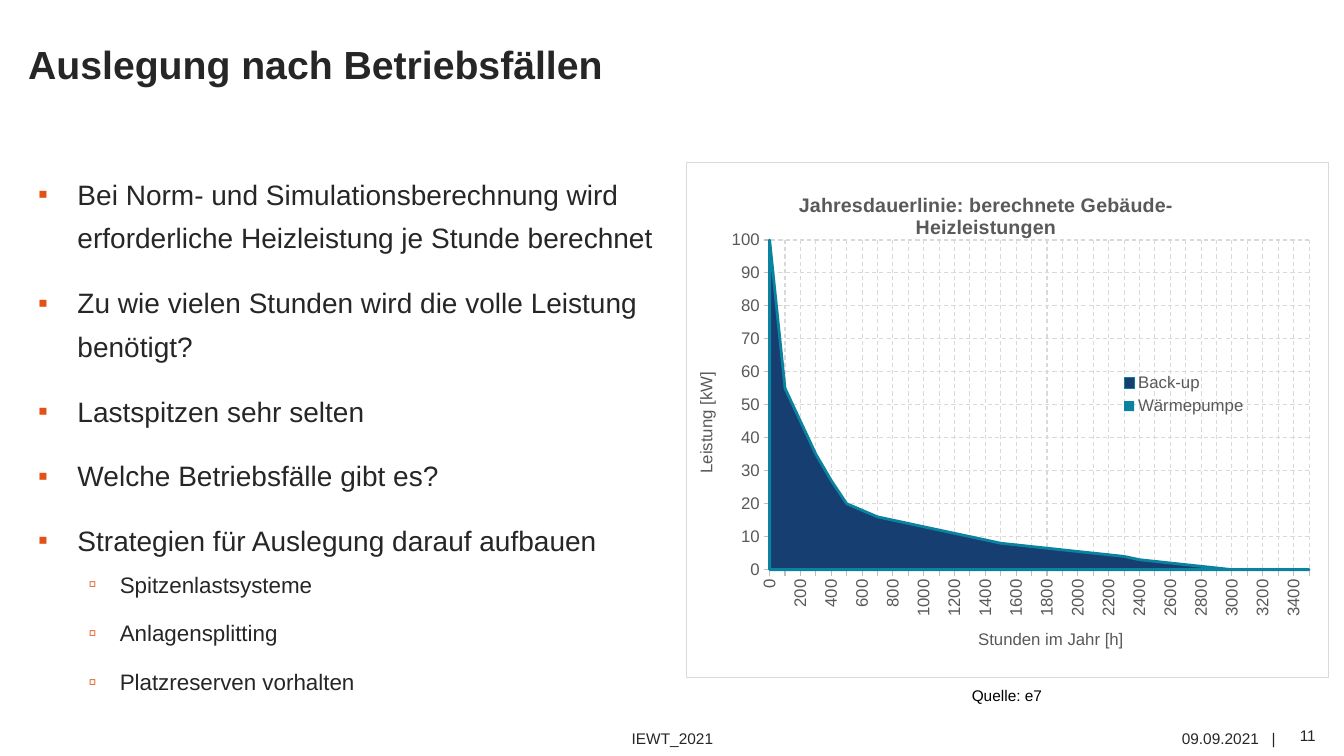
from lxml import etree
from pptx import Presentation
from pptx.chart.data import CategoryChartData
from pptx.dml.color import RGBColor
from pptx.enum.chart import XL_CHART_TYPE as ChartType, XL_LEGEND_POSITION as LegendPos, XL_TICK_MARK as Tick
from pptx.enum.dml import MSO_LINE as Dash
from pptx.enum.text import MSO_ANCHOR as Anchor, PP_ALIGN as Align
from pptx.oxml import parse_xml
from pptx.oxml.ns import nsdecls, qn
from pptx.util import Inches, Pt

FONT = "Arial"
COLORS = {"text": "262626", "black": "000000", "bullet": "E35114", "chart_text": "595959",
          "axis": "BFBFBF", "grid": "D9D9D9", "backup": "173E70", "heat_pump": "0A83A0"}
POINTS = [("Bei Norm- und Simulationsberechnung wird erforderliche Heizleistung je Stunde berechnet", 0),
          ("Zu wie vielen Stunden wird die volle Leistung benötigt?", 0),
          ("Lastspitzen sehr selten", 0),
          ("Welche Betriebsfälle gibt es?", 0),
          ("Strategien für Auslegung darauf aufbauen", 0),
          ("Spitzenlastsysteme", 1),
          ("Anlagensplitting", 1),
          ("Platzreserven vorhalten", 1)]
LEVELS = [{"size": 20, "mark": "▪", "left": 0.39, "hang": 0.39, "before": 15, "after": 0},
          {"size": 16, "mark": "▫", "left": 0.81, "hang": 0.31, "before": 4, "after": 6}]
HOURS = range(0, 3501, 100)
LOAD = [100, 55, 45, 35, 27, 20, 18, 16, 15, 14, 13, 12, 11, 10, 9, 8, 7.5, 7, 6.5, 6, 5.5, 5,
        4.5, 4, 3, 2.5, 2, 1.5, 1, 0.5, 0, 0, 0, 0, 0, 0]
HEAT_PUMP_MAX = 20


def rgb(name):
    return RGBColor.from_string(COLORS[name])


def style(font, size, color, bold=False):
    font.name, font.size, font.bold = FONT, Pt(size), bold
    font.color.rgb = rgb(color)


def add_label(slide, box, text, size=11, color="text", bold=False, align=Align.LEFT,
              anchor=Anchor.MIDDLE, inset=True, spacing=None, wrap=True):
    frame = slide.shapes.add_textbox(*map(Inches, box)).text_frame
    frame.word_wrap, frame.vertical_anchor = wrap, anchor
    if not inset:
        frame.margin_left = frame.margin_right = frame.margin_top = frame.margin_bottom = 0
    line = frame.paragraphs[0]
    line.text, line.alignment, line.line_spacing = text, align, spacing
    style(line.font, size, color, bold)


def add_points(slide, box):
    frame = slide.shapes.add_textbox(*map(Inches, box)).text_frame
    frame.word_wrap = True
    for index, (text, depth) in enumerate(POINTS):
        level = LEVELS[depth]
        point = frame.add_paragraph() if index else frame.paragraphs[0]
        point.text, point.level, point.line_spacing = text, depth, 1.3
        point.space_before = Pt(level["before"] if index else 0)
        point.space_after = Pt(level["after"])
        props = point._p.get_or_add_pPr()
        props.set("marL", str(Inches(level["left"])))
        props.set("indent", str(-Inches(level["hang"])))
        bullet_color = etree.SubElement(props, qn("a:buClr"))
        etree.SubElement(bullet_color, qn("a:srgbClr"), val=COLORS["bullet"])
        etree.SubElement(props, qn("a:buFont"), typeface=FONT)
        etree.SubElement(props, qn("a:buChar"), char=level["mark"])
        style(point.font, level["size"], "text")


def place(element, inner=False, **position):
    for old in element.findall(qn("c:layout")):
        element.remove(old)
    layout = etree.Element(qn("c:layout"))
    manual = etree.SubElement(layout, qn("c:manualLayout"))
    if inner:
        etree.SubElement(manual, qn("c:layoutTarget"), val="inner")
    for key in ("x", "y"):
        etree.SubElement(manual, qn(f"c:{key}Mode"), val="edge")
    for key, value in position.items():
        etree.SubElement(manual, qn(f"c:{key}"), val=str(value))
    overlay = element.find(qn("c:overlay"))
    if overlay is None:
        element.insert(0, layout)
    else:
        overlay.addprevious(layout)


def set_title(title, text, size, bold, x, y):
    line = title.text_frame.paragraphs[0]
    line.text = text
    style(line.font, size, "chart_text", bold)
    place(title._element, x=x, y=y)


def format_axis(axis, text, x, y):
    axis.has_title = axis.has_major_gridlines = True
    set_title(axis.axis_title, text, 12, False, x, y)
    axis.major_tick_mark, axis.minor_tick_mark = Tick.OUTSIDE, Tick.NONE
    axis.tick_labels.number_format = "#,##0"
    axis.tick_labels.number_format_is_linked = False
    style(axis.tick_labels.font, 12, "chart_text")
    for line, color in ((axis.format.line, "axis"), (axis.major_gridlines.format.line, "grid")):
        line.color.rgb, line.width = rgb(color), Pt(0.75)
    axis.major_gridlines.format.line.dash_style = Dash.DASH


def add_load_chart(slide, box):
    data = CategoryChartData()
    data.categories = [str(hour) for hour in HOURS]
    data.add_series("Back-up", LOAD)
    data.add_series("Wärmepumpe", [min(load, HEAT_PUMP_MAX) for load in LOAD])
    chart = slide.shapes.add_chart(ChartType.AREA, *map(Inches, box), data).chart
    style(chart.font, 12, "chart_text")
    chart.has_title = True
    set_title(chart.chart_title, "Jahresdauerlinie: berechnete Gebäude-Heizleistungen", 14, True, 0.17, 0.05)

    hours, power = chart.category_axis, chart.value_axis
    format_axis(hours, "Stunden im Jahr [h]", 0.45, 0.9)
    format_axis(power, "Leistung [kW]", 0.01, 0.4)
    power.minimum_scale, power.maximum_scale, power.major_unit = 0, 100, 10
    power._element.find(qn("c:crossBetween")).set("val", "midCat")
    hours._element.txPr.find(qn("a:bodyPr")).set("rot", "-5400000")
    skip = etree.Element(qn("c:tickLblSkip"), val="2")
    hours._element.find(qn("c:noMultiLvlLbl")).addprevious(skip)

    plot = chart.plots[0]
    plot.vary_by_categories = False
    for series, color in zip(plot.series, ("backup", "heat_pump")):
        series.format.fill.solid()
        series.format.fill.fore_color.rgb = rgb(color)
    backup, heat_pump = plot.series
    backup.format.line.color.rgb, backup.format.line.width = rgb("heat_pump"), Pt(2)
    heat_pump.format.line.fill.background()

    chart.has_legend = True
    chart.legend.position, chart.legend.include_in_layout = LegendPos.RIGHT, False
    style(chart.legend.font, 12, "chart_text")
    place(chart.legend._element, x=0.67, y=0.4, w=0.21, h=0.1)
    space = chart._chartSpace
    place(space.chart.plotArea, inner=True, x=0.13, y=0.15, w=0.84, h=0.64)
    space.chart.addnext(parse_xml(
        f'<c:spPr {nsdecls("c", "a")}><a:noFill/><a:ln w="{Pt(0.75)}"><a:solidFill>'
        f'<a:srgbClr val="{COLORS["grid"]}"/></a:solidFill></a:ln></c:spPr>'))


def add_footer(slide, top, height):
    for text, left, width in (("IEWT_2021", 3.48, 6.38), ("09.09.2021", 11.6, 1.01), ("|", 12.53, 0.18)):
        add_label(slide, (left, top, width, height), text, align=Align.CENTER, spacing=1.3,
                  wrap=text != "|")
    add_label(slide, (12.7, top, 0.35, height), "11", align=Align.RIGHT, anchor=Anchor.BOTTOM, inset=False)


def main():
    deck = Presentation()
    deck.slide_width, deck.slide_height = Inches(13.33), Inches(7.5)
    slide = deck.slides.add_slide(deck.slide_layouts[6])
    add_label(slide, (0.28, 0.19, 10.62, 0.88), "Auslegung nach Betriebsfällen", 28, bold=True, inset=False)
    add_points(slide, (0.28, 1.61, 6.99, 5.44))
    add_load_chart(slide, (6.8, 1.61, 6.38, 5.12))
    add_label(slide, (9.54, 6.76, 0.9, 0.29), "Quelle: e7", color="black", anchor=Anchor.TOP, wrap=False)
    add_footer(slide, 7.2, 0.19)
    deck.save("out.pptx")


if __name__ == "__main__":
    main()
